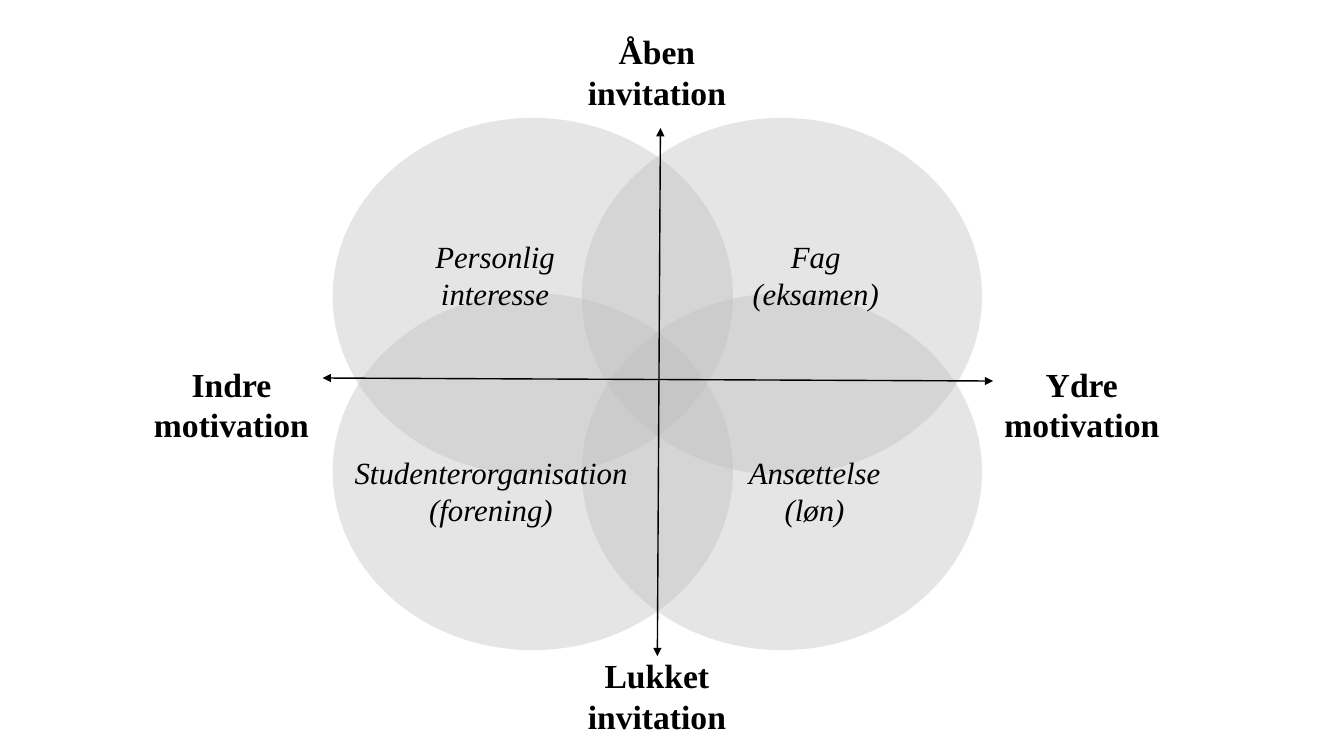
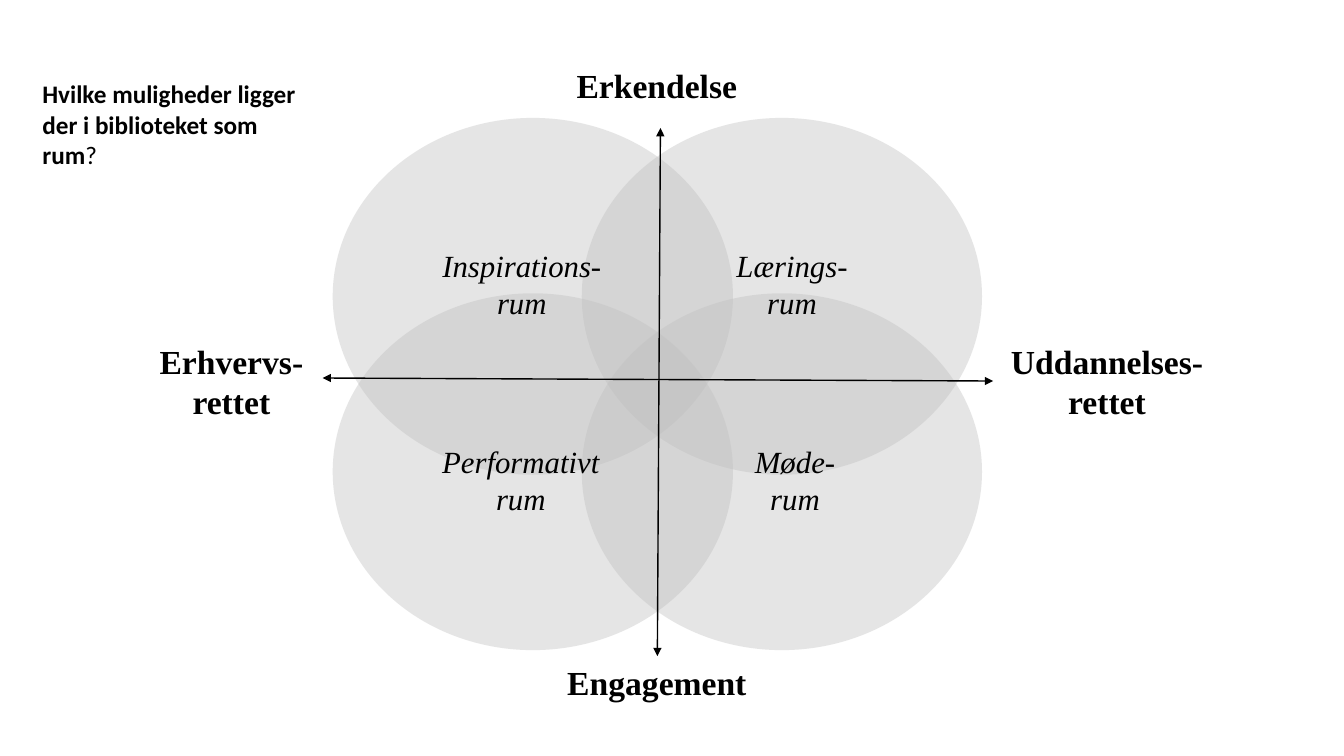
from lxml import etree
from pptx import Presentation
from pptx import util as u
from pptx.dml.color import RGBColor
from pptx.enum import shapes, text
from pptx.oxml import ns

PX = 9144
TITLE_ONLY, BLANK = 5, 6

SERIF = "Times New Roman"
POLE = {"name": SERIF, "size": u.Pt(24), "bold": True}
FIELD = {"name": SERIF, "size": u.Pt(22), "italic": True}
QUESTION = {"name": "Calibri", "size": u.Pt(18), "bold": True}

CIRCLE_SIZE = (397, 354)
CIRCLE_LEFTS = (577, 330)
CIRCLE_TOPS = (117, 291)
AXES = [(655, 127, 652, 651), (985, 378, 320, 375)]

MOTIVATION_POLES = [
    ("Åben invitation", 551, 26, 201, 91),
    ("Lukket invitation", 551, 645, 201, 91),
    ("Indre motivation", 129, 356, 201, 91),
    ("Ydre\nmotivation", 941, 356, 264, 91),
]
MOTIVATION_FIELDS = [
    ("Personlig interesse", 390, 231, 202, 84),
    ("Studenterorganisation\n(forening)", 339, 445, 296, 84),
    ("Fag\n(eksamen)", 707, 231, 204, 84),
    ("Ansættelse\n(løn)", 713, 445, 190, 84),
]
ROOM_POLES = [
    ("Erkendelse", 551, 59, 201, 50),
    ("Engagement", 551, 652, 201, 50),
    ("Erhvervs-rettet", 129, 333, 201, 91),
    ("Uddannelses-rettet", 966, 333, 264, 91),
]
ROOM_FIELDS = [
    ("Lærings-\nrum", 685, 240, 201, 84),
    ("Møde-\nrum", 691, 434, 195, 84),
    ("Inspirations-rum", 417, 240, 201, 84),
    ("Performativt\nrum", 392, 434, 249, 84),
]


def color(value):
    return RGBColor.from_string(value)


def px(*lengths):
    return [u.Emu(length * PX) for length in lengths]


def add_xml(parent, tag, **attributes):
    return etree.SubElement(parent, ns.qn(tag), attributes)


class Deck:
    ink = "000000"
    circle_fill = "BFBFBF"
    circle_alpha = "40000"

    def __init__(self):
        self.presentation = Presentation()
        self.presentation.slide_width, self.presentation.slide_height = px(1333, 750)
        self.slide = None

    def add_slide(self, layout):
        layouts = self.presentation.slide_layouts
        self.slide = self.presentation.slides.add_slide(layouts[layout])

    def style(self, font, formats):
        for name, value in formats.items():
            setattr(font, name, value)
        font.color.rgb = color(self.ink)

    def frame(self, shape, alignment, formats):
        text_frame = shape.text_frame
        settings = {
            "word_wrap": True,
            "auto_size": text.MSO_AUTO_SIZE.SHAPE_TO_FIT_TEXT,
            "vertical_anchor": text.MSO_ANCHOR.TOP,
        }
        for name, value in settings.items():
            setattr(text_frame, name, value)
        for paragraph in text_frame.paragraphs:
            paragraph.alignment = alignment
            for run in paragraph.runs:
                self.style(run.font, formats)

    def title(self, words, mark, left, top, width, height):
        shape = self.slide.shapes.title
        shape.left, shape.top, shape.width, shape.height = px(left, top, width, height)
        shape.text_frame.text = words
        self.frame(shape, text.PP_ALIGN.LEFT, QUESTION)
        run = shape.text_frame.paragraphs[0].add_run()
        run.text = mark
        self.style(run.font, {**QUESTION, "bold": False})

    def label(self, words, box, formats):
        shape = self.slide.shapes.add_textbox(*px(*box))
        shape.text_frame.text = words
        self.frame(shape, text.PP_ALIGN.CENTER, formats)

    def circle(self, left, top):
        shape = self.slide.shapes.add_shape(
            shapes.MSO_SHAPE.OVAL, *px(left, top, *CIRCLE_SIZE)
        )
        shape.shadow.inherit = False
        shape.fill.solid()
        shape.fill.fore_color.rgb = color(self.circle_fill)
        shape.line.fill.background()
        fill = shape.element.spPr.find(ns.qn("a:solidFill"))
        add_xml(fill[0], "a:alpha", val=self.circle_alpha)

    def axis(self, ends):
        connector = self.slide.shapes.add_connector(
            shapes.MSO_CONNECTOR.STRAIGHT, *px(*ends)
        )
        connector.line.color.rgb = color(self.ink)
        connector.line.width = u.Pt(1)
        properties = connector.element.spPr
        line = properties.find(ns.qn("a:ln"))
        for tag in ("a:headEnd", "a:tailEnd"):
            add_xml(line, tag, type="triangle")
        add_xml(properties, "a:effectLst")

    def diagram(self, poles, fields):
        for top in CIRCLE_TOPS:
            for left in CIRCLE_LEFTS:
                self.circle(left, top)
        for ends in AXES:
            self.axis(ends)
        for labels, formats in ((poles, POLE), (fields, FIELD)):
            for words, *box in labels:
                self.label(words, box, formats)


def main():
    deck = Deck()
    deck.add_slide(BLANK)
    deck.diagram(MOTIVATION_POLES, MOTIVATION_FIELDS)
    deck.add_slide(TITLE_ONLY)
    deck.title(
        "Hvilke muligheder ligger der i biblioteket som rum", "?", 32, 73, 276, 101
    )
    deck.diagram(ROOM_POLES, ROOM_FIELDS)
    deck.presentation.save("out.pptx")


if __name__ == "__main__":
    main()
